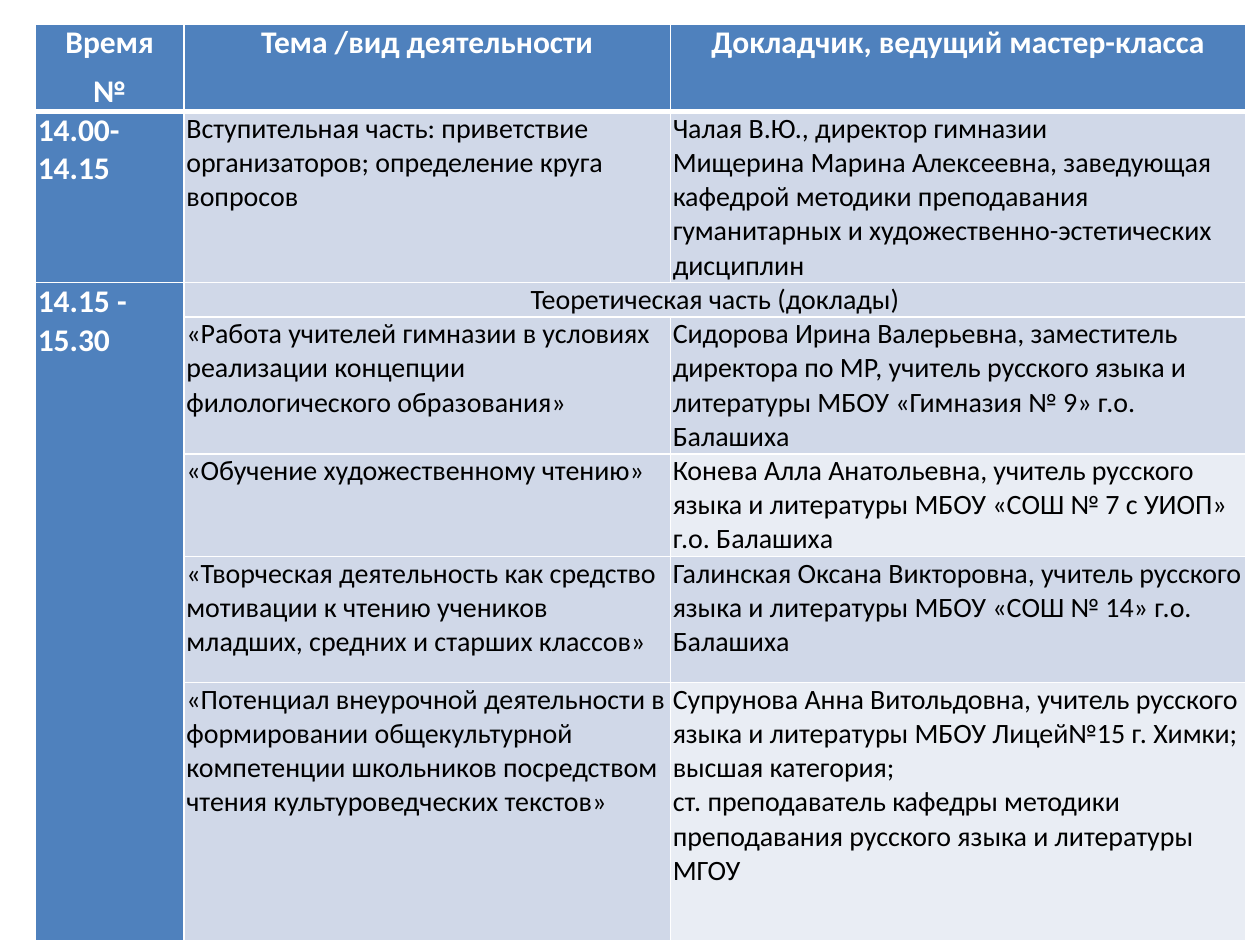
from lxml.etree import SubElement
from pptx import Presentation
from pptx.dml.color import RGBColor
from pptx.enum.text import PP_ALIGN
from pptx.oxml.ns import qn
from pptx.util import Inches, Pt

FONT = "Calibri"
BLUE, LIGHT, PALE = "4F81BD", "D0D8E8", "E9EDF4"
WHITE, BLACK = "FFFFFF", "000000"

COL_WIDTHS = [1.18, 3.86, 4.57]
ROW_HEIGHTS = [0.65, 1.28, 0.26, 1.02, 0.77, 1, 2.05]
PALE_CELLS = {(4, 2), (6, 2)}
MULTI_ROW_TIME, PART_TITLE = (2, 0), (2, 1)

# Each cell is a list of paragraphs; None is covered by a merged cell
PROGRAM = [
    [["Время", "№"], ["Тема /вид деятельности"],
     ["Докладчик, ведущий мастер-класса"]],
    [["14.00-14.15"],
     ["Вступительная часть: приветствие организаторов; определение круга вопросов"],
     ["Чалая В.Ю., директор гимназии",
      "Мищерина Марина Алексеевна, заведующая кафедрой методики преподавания "
      "гуманитарных и художественно-эстетических дисциплин"]],
    [["14.15 - 15.30"], ["Теоретическая часть (доклады)"], None],
    [None,
     ["«Работа учителей гимназии в условиях реализации концепции "
      "филологического образования»"],
     ["Сидорова Ирина Валерьевна, заместитель директора по МР, учитель русского "
      "языка и литературы МБОУ «Гимназия № 9» г.о. Балашиха"]],
    [None, ["«Обучение художественному чтению»"],
     ["Конева Алла Анатольевна, учитель русского языка и литературы "
      "МБОУ «СОШ № 7 с УИОП» г.о. Балашиха"]],
    [None,
     ["«Творческая деятельность как средство мотивации к чтению учеников "
      "младших, средних и старших классов»"],
     ["Галинская Оксана Викторовна, учитель русского языка и литературы "
      "МБОУ «СОШ № 14» г.о. Балашиха"]],
    [None,
     ["«Потенциал внеурочной деятельности в формировании общекультурной "
      "компетенции школьников посредством чтения культуроведческих текстов»"],
     ["Супрунова Анна Витольдовна, учитель русского языка и литературы "
      "МБОУ Лицей№15 г. Химки; высшая категория;",
      "ст. преподаватель кафедры методики преподавания русского языка "
      "и литературы МГОУ"]],
]


def color(value):
    return RGBColor.from_string(value)


def set_borders(cell, top=1, bottom=1):
    tcPr = cell._tc.get_or_add_tcPr()
    for side, width in (("L", 1), ("R", 1), ("T", top), ("B", bottom)):
        ln = SubElement(tcPr, qn(f"a:ln{side}"), w=str(Pt(width)))
        fill = SubElement(ln, qn("a:solidFill"))
        SubElement(fill, qn("a:srgbClr"), val=WHITE)


def style_cell(cell, row, col):
    # The thick rule under the header belongs to both adjoining rows
    set_borders(cell, top=3 if row == 1 else 1, bottom=3 if row == 0 else 1)
    cell.margin_left = cell.margin_right = Inches(0.02)
    cell.margin_top = cell.margin_bottom = 0
    if row == 0 or col == 0:
        fill = BLUE
    else:
        fill = PALE if (row, col) in PALE_CELLS else LIGHT
    cell.fill.solid()
    cell.fill.fore_color.rgb = color(fill)


def fill_text(cell, paragraphs, heading, centered, space_after):
    tf = cell.text_frame
    for i, text in enumerate(paragraphs):
        p = tf.add_paragraph() if i else tf.paragraphs[0]
        p.alignment = PP_ALIGN.CENTER if centered else PP_ALIGN.LEFT
        p.space_after = Pt(space_after)
        r = p.add_run()
        r.text = text
        r.font.name = FONT
        r.font.size = Pt(18 if heading else 16)
        r.font.bold = heading
        r.font.color.rgb = color(WHITE if heading else BLACK)


def add_program_table(s):
    table = s.shapes.add_table(
        len(ROW_HEIGHTS), len(COL_WIDTHS), Inches(0.28), Inches(0.19),
        Inches(sum(COL_WIDTHS)), Inches(sum(ROW_HEIGHTS))).table
    for column, width in zip(table.columns, COL_WIDTHS):
        column.width = Inches(width)
    for table_row, height in zip(table.rows, ROW_HEIGHTS):
        table_row.height = Inches(height)

    # Merged cells: the long time slot and the heading of the talks
    table.cell(*MULTI_ROW_TIME).merge(table.cell(6, 0))
    table.cell(*PART_TITLE).merge(table.cell(2, 2))

    for row, contents in enumerate(PROGRAM):
        for col, paragraphs in enumerate(contents):
            cell = table.cell(row, col)
            style_cell(cell, row, col)
            if paragraphs:
                # Speakers and the last row are set tight
                tight = row == 6 or (row, col) == (1, 2)
                fill_text(cell, paragraphs,
                          heading=row == 0 or col == 0,
                          centered=row == 0 or (row, col) == PART_TITLE,
                          space_after=0 if tight else 6)


def main():
    prs = Presentation()
    prs.slide_width, prs.slide_height = Inches(10), Inches(7.5)
    s = prs.slides.add_slide(prs.slide_layouts[6])
    add_program_table(s)
    prs.save("out.pptx")


if __name__ == "__main__":
    main()
